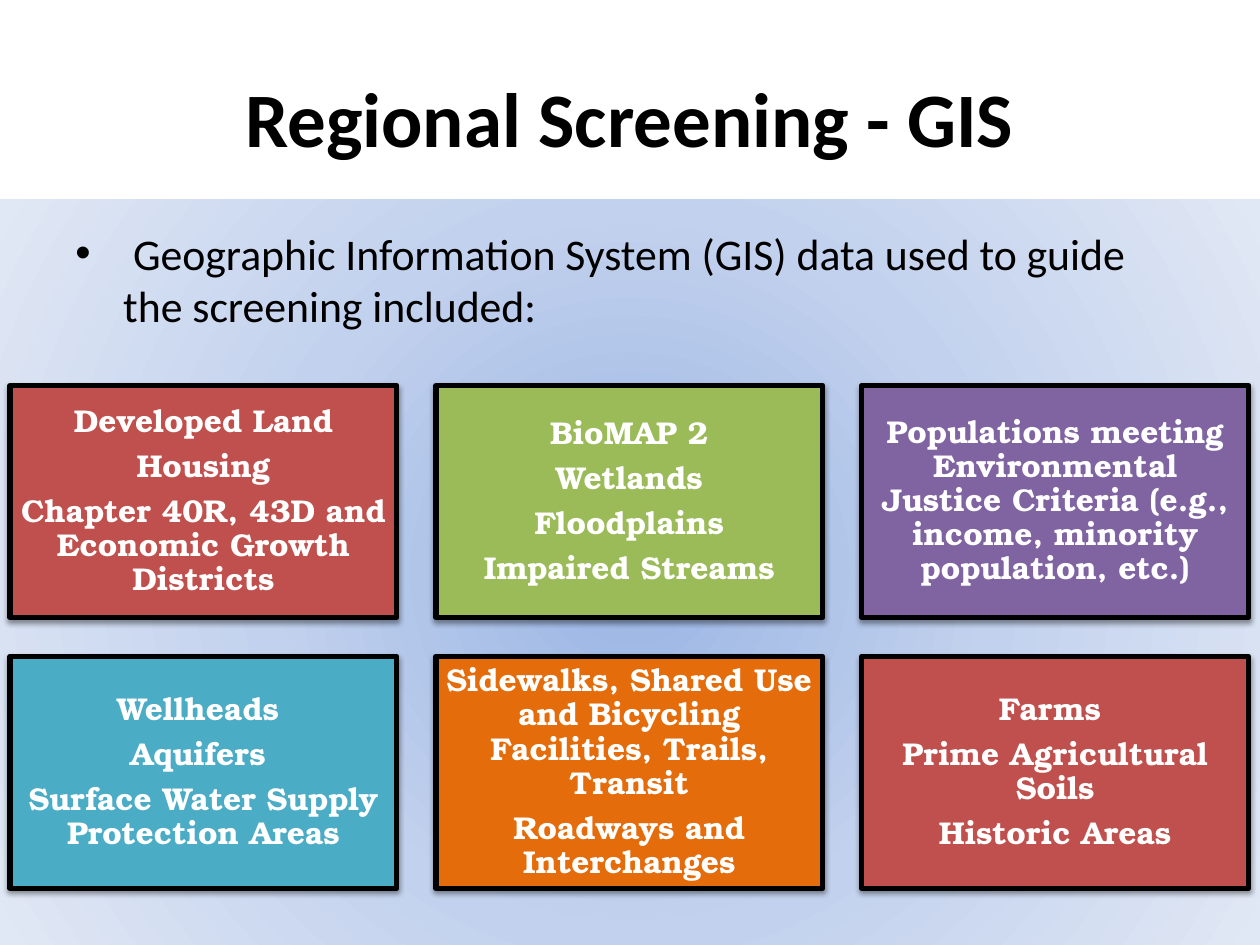
from lxml import etree
from pptx import Presentation
from pptx.dml.color import RGBColor
from pptx.enum.shapes import MSO_SHAPE
from pptx.enum.text import MSO_ANCHOR, PP_ALIGN
from pptx.oxml.ns import qn
from pptx.util import Inches, Pt

RECT = MSO_SHAPE.RECTANGLE
MIDDLE = MSO_ANCHOR.MIDDLE
CENTER = PP_ALIGN.CENTER

COLORS = {
    "black": "000000", "white": "FFFFFF", "red": "C0504D",
    "green": "9BBB59", "purple": "8064A2", "teal": "4BACC6",
    "orange": "E46C0A", "core": "9AB5E4", "mid": "C2D1ED", "rim": "E1E8F5",
}
SANS = "Calibri"
SERIF = "TeX Gyre Bonum"

CARDS = [
    ("red", ["Developed Land", "Housing",
             "Chapter 40R, 43D and Economic Growth Districts"]),
    ("green", ["BioMAP 2", "Wetlands", "Floodplains", "Impaired Streams"]),
    ("purple", ["Populations meeting Environmental Justice Criteria "
                "(e.g., income, minority population, etc.)"]),
    ("teal", ["Wellheads ", "Aquifers ",
              "Surface Water Supply Protection Areas"]),
    ("orange", ["Sidewalks, Shared Use and Bicycling Facilities, Trails, Transit",
                "Roadways and Interchanges"]),
    ("red", ["Farms ", "Prime Agricultural Soils", "Historic Areas"]),
]


def rgb(name):
    """Return the named colour."""
    return RGBColor.from_string(COLORS[name])


def node(parent, tag, **attrs):
    """Append a drawing element to its parent."""
    return etree.SubElement(parent, qn(tag), attrs)


def add_run(para, text, size, face, color, bold=False):
    """Append a styled run."""
    run = para.add_run()
    run.text = text
    font = run.font
    font.size, font.name, font.bold = Pt(size), face, bold
    font.color.rgb = rgb(color)


def add_panel(slide, left, top, width, height):
    """Place the panel with a radial gradient."""
    panel = slide.shapes.add_shape(RECT, left, top, width, height)
    panel.shadow.inherit = False
    panel.line.fill.background()
    panel.fill.background()
    props = panel.fill._xPr
    grad = etree.Element(qn("a:gradFill"), rotWithShape="1")
    props.replace(props.find(qn("a:noFill")), grad)
    stops = node(grad, "a:gsLst")
    for pos, name in ((0, "core"), (50, "mid"), (100, "rim")):
        stop = node(stops, "a:gs", pos=str(pos * 1000))
        node(stop, "a:srgbClr", val=COLORS[name])
    focus = node(grad, "a:path", path="circle")
    node(focus, "a:fillToRect", l="50000", t="50000", r="50000", b="50000")


def add_title(slide, left, top, width, height):
    """Place the slide title."""
    frame = slide.shapes.add_textbox(left, top, width, height).text_frame
    frame.word_wrap = True
    frame.vertical_anchor = MIDDLE
    para = frame.paragraphs[0]
    para.alignment = CENTER
    add_run(para, "Regional Screening - GIS", 44, SANS, "black", True)


def add_intro(slide, left, top, width, height):
    """Place the bulleted introduction."""
    frame = slide.shapes.add_textbox(left, top, width, height).text_frame
    frame.word_wrap = True
    para = frame.paragraphs[0]
    props = para._p.get_or_add_pPr()
    indent = Inches(0.38)
    props.set("marL", str(indent))
    props.set("indent", str(-indent))
    node(props, "a:buFont", typeface="Arial")
    node(props, "a:buChar", char="•")
    add_run(para, " Geographic Information System (GIS) data used to guide "
            "the screening included:", 25, SANS, "black")


def add_shadow(shape):
    """Give a shape a soft shadow below it."""
    shape.shadow.inherit = False
    effects = shape._element.spPr.find(qn("a:effectLst"))
    outer = node(effects, "a:outerShdw", blurRad=str(Pt(3.1)),
                 dist=str(Pt(1.6)), dir="5400000", rotWithShape="0")
    tint = node(outer, "a:srgbClr", val=COLORS["black"])
    node(tint, "a:alpha", val="38000")


def add_card(slide, left, top, width, height, color, lines):
    """Place one outlined card of data layers."""
    card = slide.shapes.add_shape(RECT, left, top, width, height)
    card.fill.solid()
    card.fill.fore_color.rgb = rgb(color)
    card.line.color.rgb = rgb("black")
    card.line.width = Pt(3)
    add_shadow(card)
    frame = card.text_frame
    frame.word_wrap = True
    frame.vertical_anchor = MIDDLE
    frame.margin_left = frame.margin_right = Inches(0.07)
    frame.margin_top = frame.margin_bottom = Inches(0.07)
    for i, line in enumerate(lines):
        para = frame.add_paragraph() if i else frame.paragraphs[0]
        para.alignment = CENTER
        para.line_spacing = 0.9
        para.space_after = Pt(6.3)
        add_run(para, line, 18, SERIF, "white", True)


def add_grid(slide, left, top, width, height, cols=3, rows=2):
    """Place the cards in an even grid."""
    gap = Inches(0.31)
    wide = (width - gap * (cols - 1)) // cols
    high = (height - gap * (rows - 1)) // rows
    for i, (color, lines) in enumerate(CARDS):
        row, col = divmod(i, cols)
        add_card(slide, left + col * (wide + gap), top + row * (high + gap),
                 wide, high, color, lines)


def main():
    """Build and save the slide."""
    deck = Presentation()
    deck.slide_width, deck.slide_height = Inches(10), Inches(7.5)
    slide = deck.slides.add_slide(deck.slide_layouts[6])
    add_panel(slide, 0, Inches(1.58), Inches(10), Inches(5.92))
    add_title(slide, Inches(0.5), Inches(0.3), Inches(9), Inches(1.25))
    add_intro(slide, Inches(0.5), Inches(1.75), Inches(9), Inches(1.2))
    add_grid(slide, Inches(0.08), Inches(3.06), Inches(9.83), Inches(3.99))
    deck.save("out.pptx")


if __name__ == "__main__":
    main()
